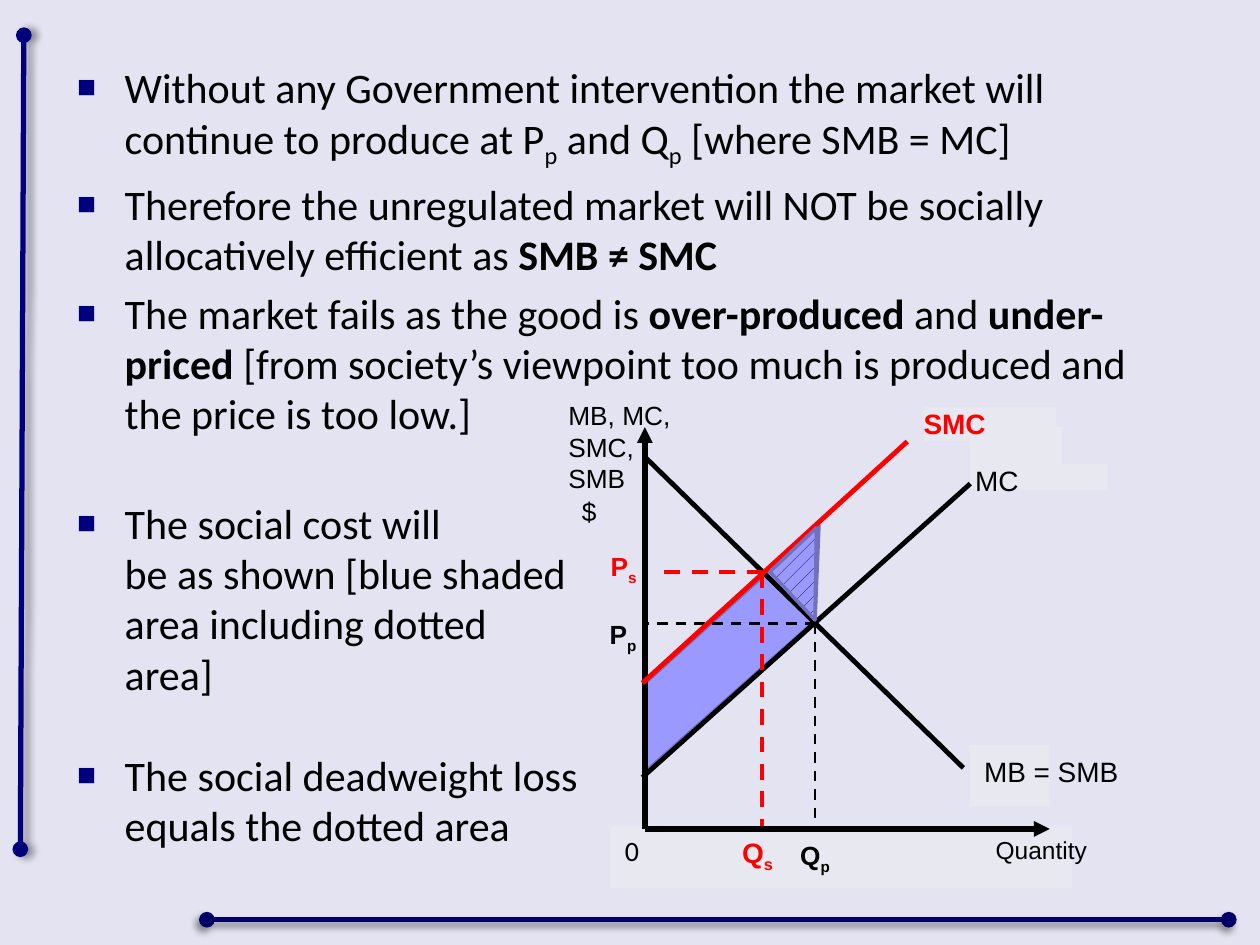
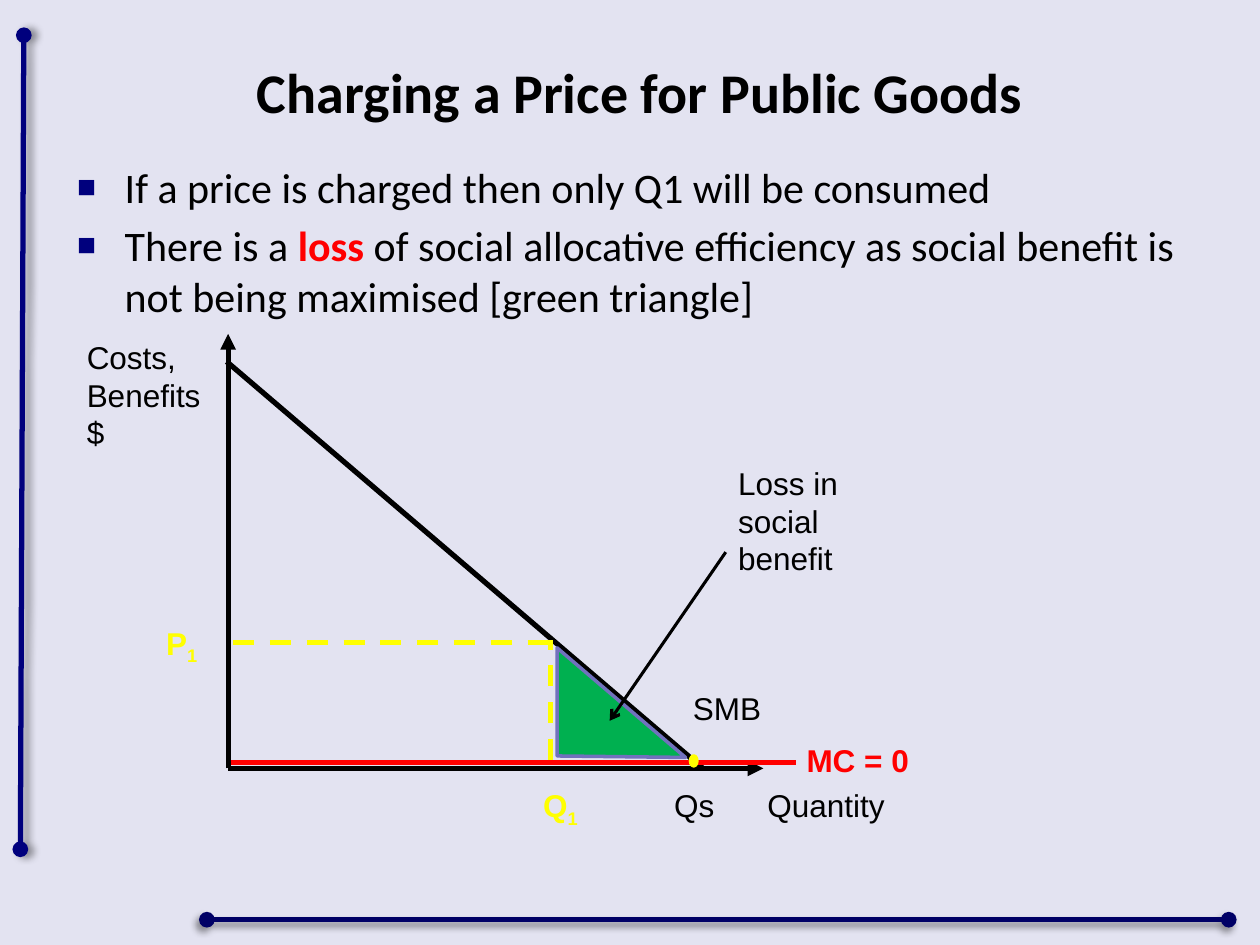
"""Build two economics slides: market failure and pricing of public goods."""
from lxml import etree
from pptx import Presentation
from pptx.dml.color import RGBColor
from pptx.enum.dml import MSO_LINE, MSO_PATTERN
from pptx.enum.shapes import MSO_CONNECTOR, MSO_SHAPE
from pptx.enum.text import MSO_ANCHOR, MSO_AUTO_SIZE, PP_ALIGN
from pptx.oxml.ns import qn
from pptx.util import Cm, Pt

STRAIGHT = MSO_CONNECTOR.STRAIGHT
RECT, OVAL = MSO_SHAPE.RECTANGLE, MSO_SHAPE.OVAL
DASH = MSO_LINE.DASH
DOTTED = MSO_PATTERN.PERCENT_10
MIDDLE = MSO_ANCHOR.MIDDLE
NO_FIT = MSO_AUTO_SIZE.NONE
LEFT, CENTER, RIGHT = PP_ALIGN.LEFT, PP_ALIGN.CENTER, PP_ALIGN.RIGHT

COLORS = {
    "background": "E3E3F1", "navy": "00007D", "band": "000066",
    "black": "000000", "red": "FF0000", "yellow": "FFFF00",
    "plate": "E8E8F1", "area": "9999FF", "outline": "7171BD",
    "green": "00B050",
}


def rgb(name):
    return RGBColor.from_string(COLORS[name])


def add(parent, tag, **attrs):
    el = etree.SubElement(parent, qn(tag))
    for key, value in attrs.items():
        el.set(key, str(value))
    return el


class Deck:
    """Hold the shared style and draw on the current slide."""

    def __init__(self):
        self.prs = Presentation()
        self.prs.slide_width, self.prs.slide_height = Cm(25.4), Cm(19.05)
        fill = self.prs.slide_master.background.fill
        fill.solid()
        fill.fore_color.rgb = rgb("background")
        self.s = None

    def slide(self):
        self.s = self.prs.slides.add_slide(self.prs.slide_layouts[1])
        self.band((0.48, 0.71), (0.41, 17.12), "navy", 0)
        self.band((4.17, 18.54), (24.77, 18.54), "band", 135)

    def band(self, start, end, color, angle):
        c = self.line(start, end, color, head="oval", tail="oval")
        effects = c._element.spPr.find(qn("a:effectLst"))
        shadow = add(effects, "a:outerShdw", blurRad=Pt(4), dist=Pt(3),
                     dir=angle * 60000, algn="tl", rotWithShape=0)
        add(add(shadow, "a:srgbClr", val=COLORS["black"]), "a:alpha", val=40000)

    def line(self, start, end, color="black", width=3, dash=None, head=None, tail=None):
        c = self.s.shapes.add_connector(STRAIGHT, *map(Cm, start + end))
        c.line.color.rgb = rgb(color)
        c.line.width = Pt(width)
        if dash:
            c.line.dash_style = dash
        ln = c._element.spPr.find(qn("a:ln"))
        for tag, kind in (("a:headEnd", head), ("a:tailEnd", tail)):
            if kind:
                add(ln, tag, type=kind)
        add(c._element.spPr, "a:effectLst")
        return c

    def paint(self, sp, fill, outline=None):
        sp.shadow.inherit = False
        sp.fill.solid()
        sp.fill.fore_color.rgb = rgb(fill)
        if outline:
            sp.line.color.rgb = rgb(outline)
            sp.line.width = Pt(2)
        else:
            sp.line.fill.background()

    def shape(self, kind, box, fill, outline=None):
        sp = self.s.shapes.add_shape(kind, *map(Cm, box))
        self.paint(sp, fill, outline)

    def area(self, points, fill="area", dotted=False):
        corners = [(Cm(x), Cm(y)) for x, y in points]
        builder = self.s.shapes.build_freeform(*corners[0])
        builder.add_line_segments(corners[1:], close=True)
        sp = builder.convert_to_shape()
        self.paint(sp, fill, "outline")
        if dotted:
            sp.fill.patterned()
            sp.fill.pattern = DOTTED
            sp.fill.fore_color.rgb = rgb("black")
            sp.fill.back_color.rgb = rgb(fill)

    def runs(self, p, parts, size, font, color="black", bold=False):
        p.font.size, p.font.name = Pt(size), font
        p.font.bold, p.font.color.rgb = bold, rgb(color)
        for part in parts:
            text, *styles = (part,) if isinstance(part, str) else part
            for i, row in enumerate(text.split("\n")):
                if i:
                    p.add_line_break()
                r = p.add_run()
                r.text = row
                if "bold" in styles:
                    r.font.bold = True
                if "red" in styles:
                    r.font.color.rgb = rgb("red")
                if "sub" in styles:
                    r._r.get_or_add_rPr().set("baseline", "-25000")

    def label(self, x, y, *parts, size=18, font="Arial", color="black",
              bold=False, align=LEFT, width=3):
        left = x - width if align == RIGHT else x
        tb = self.s.shapes.add_textbox(Cm(left), Cm(y), Cm(width), Cm(0.7))
        tf = tb.text_frame
        tf.margin_left = tf.margin_right = tf.margin_top = tf.margin_bottom = 0
        tf.word_wrap = True
        p = tf.paragraphs[0]
        p.alignment = align
        self.runs(p, parts, size, font, color, bold)

    def place(self, sp, box):
        sp.left, sp.top, sp.width, sp.height = map(Cm, box)
        tf = sp.text_frame
        tf.word_wrap = True
        tf.auto_size = NO_FIT
        return tf

    def title(self, box, text):
        tf = self.place(self.s.shapes.title, box)
        tf.vertical_anchor = MIDDLE
        p = tf.paragraphs[0]
        p.alignment = CENTER
        self.runs(p, [text], 32, "Calibri", bold=True)

    def no_title(self):
        el = self.s.shapes.title._element
        el.getparent().remove(el)

    def bullets(self, box, items):
        tf = self.place(self.s.placeholders[1], box)
        for i, (gap, *parts) in enumerate(items):
            p = tf.add_paragraph() if i else tf.paragraphs[0]
            p.space_before = Pt(gap)
            pPr = p._p.get_or_add_pPr()
            pPr.set("marL", str(Cm(0.96)))
            pPr.set("indent", str(-Cm(0.96)))
            add(add(pPr, "a:buClr"), "a:srgbClr", val=COLORS["navy"])
            add(pPr, "a:buSzPct", val=75000)
            add(pPr, "a:buFont", typeface="Arial")
            add(pPr, "a:buChar", char="■")
            self.runs(p, parts, 24, "Calibri")


def market_failure(d):
    d.slide()
    d.no_title()
    d.area([(12.98, 13.79), (16.51, 10.59), (16.43, 12.52), (13, 15.57)])
    d.bullets((1.3, 1.12, 22.86, 16.66), [
        (0, "Without any Government intervention the market will continue to produce at P",
         ("p", "sub"), " and Q", ("p", "sub"), " [where SMB = MC]"),
        (4.8, "Therefore the unregulated market will NOT be socially allocatively efficient as ",
         ("SMB ≠ SMC", "bold")),
        (4.8, "The market fails as the good is ", ("over-produced", "bold"), " and ",
         ("under-priced ", "bold"),
         "[from society’s viewpoint too much is produced and the price is too low.]"),
        (33.6, "The social cost will\nbe as shown [blue shaded\narea including dotted\narea]"),
        (29, "The social deadweight loss\nequals the dotted area"),
    ])

    for box in ((12.29, 16.66, 9.32, 1.24), (19.56, 15.01, 1.6, 1.24),
                (19.56, 8.61, 1.85, 1.24), (19.66, 9.35, 2.67, 0.53),
                (18.62, 8.2, 2.67, 0.69)):
        d.shape(RECT, box, "plate")

    origin = (13, 16.71)
    d.line(origin, (21.16, 16.71), tail="triangle")
    d.line(origin, (13, 8.61), tail="triangle")
    d.line((12.95, 15.67), (19.56, 9.75), width=2.75)
    private = (16.43, 12.57)
    d.line(private, (13, 12.57), width=1.5, dash=DASH)
    d.line(private, (16.43, 16.69), width=1.5, dash=DASH)
    d.line((13.02, 9.23), (19.42, 15.48), width=2.75)
    d.line((12.95, 13.77), (18.29, 8.9), "red", 2.75)
    social = (15.37, 11.53)
    d.line(social, (13.18, 11.53), "red", 2.25, DASH)
    d.line(social, (15.37, 16.66), "red", 2.25, DASH)

    d.label(11.46, 8.05, "MB, MC,\nSMC,\nSMB", size=15)
    d.label(11.73, 9.98, "$", size=15)
    d.label(12.83, 11.1, "P", ("s", "sub"), size=15, color="red", bold=True, align=RIGHT)
    d.label(12.83, 12.47, "P", ("p", "sub"), size=15, bold=True, align=RIGHT)
    d.label(12.6, 16.81, "0", size=16, font="Calibri")
    d.label(14.96, 16.84, "Q", ("s", "sub"), size=16, color="red", bold=True)
    d.label(16.13, 16.92, "Q", ("p", "sub"), size=15, bold=True)
    d.label(20.07, 16.84, "Quantity", size=14)
    d.label(19.84, 15.21, "MB = SMB", size=16)
    d.label(19.66, 9.35, "MC", size=16)
    d.label(18.62, 8.2, "SMC", size=16, color="red", bold=True)
    d.area([(16.43, 12.5), (15.52, 11.53), (16.46, 10.64)], dotted=True)


def public_goods(d):
    d.slide()
    d.title((1.5, 0.33, 22.81, 3), "Charging a Price for Public Goods")
    d.bullets((1.3, 3.12, 23.39, 14), [
        (0, "If a price is charged then only Q1 will be consumed"),
        (4.8, "There is a ", ("loss ", "bold", "red"),
         "of social allocative efficiency as social benefit is "
         "not being maximised [green triangle]"),
    ])

    origin = (4.6, 15.49)
    d.line(origin, (4.6, 6.73), tail="triangle")
    d.line(origin, (15.39, 15.49), tail="triangle")
    d.line((4.57, 7.29), (14.17, 15.49))
    d.line((4.65, 15.37), (16.05, 15.37), "red")

    d.label(1.75, 6.81, "Costs,\nBenefits\n$")
    d.label(3.35, 12.57, "P", ("1", "sub"), color="yellow", bold=True)
    d.label(13.97, 13.89, "SMB")
    d.label(10.95, 15.85, "Q", ("1", "sub"), color="yellow", bold=True)
    d.label(13.59, 15.85, "Qs")
    d.label(15.47, 15.85, "Quantity")
    d.label(16.26, 14.94, "MC = 0", color="red", bold=True)
    d.label(14.88, 9.35, "Loss in\nsocial\nbenefit")

    d.shape(OVAL, (13.92, 15.24, 0.13, 0.2), "yellow", "yellow")
    d.line((4.7, 12.95), (11.28, 12.95), "yellow", dash=DASH)
    d.line((11.1, 15.32), (11.1, 12.9), "yellow", dash=DASH)
    d.area([(11.23, 15.24), (11.23, 13.06), (13.82, 15.27)], "green")
    d.line((14.63, 11.13), (12.29, 14.53), width=1.75, tail="arrow")


def main():
    d = Deck()
    market_failure(d)
    public_goods(d)
    d.prs.save("out.pptx")


if __name__ == "__main__":
    main()
